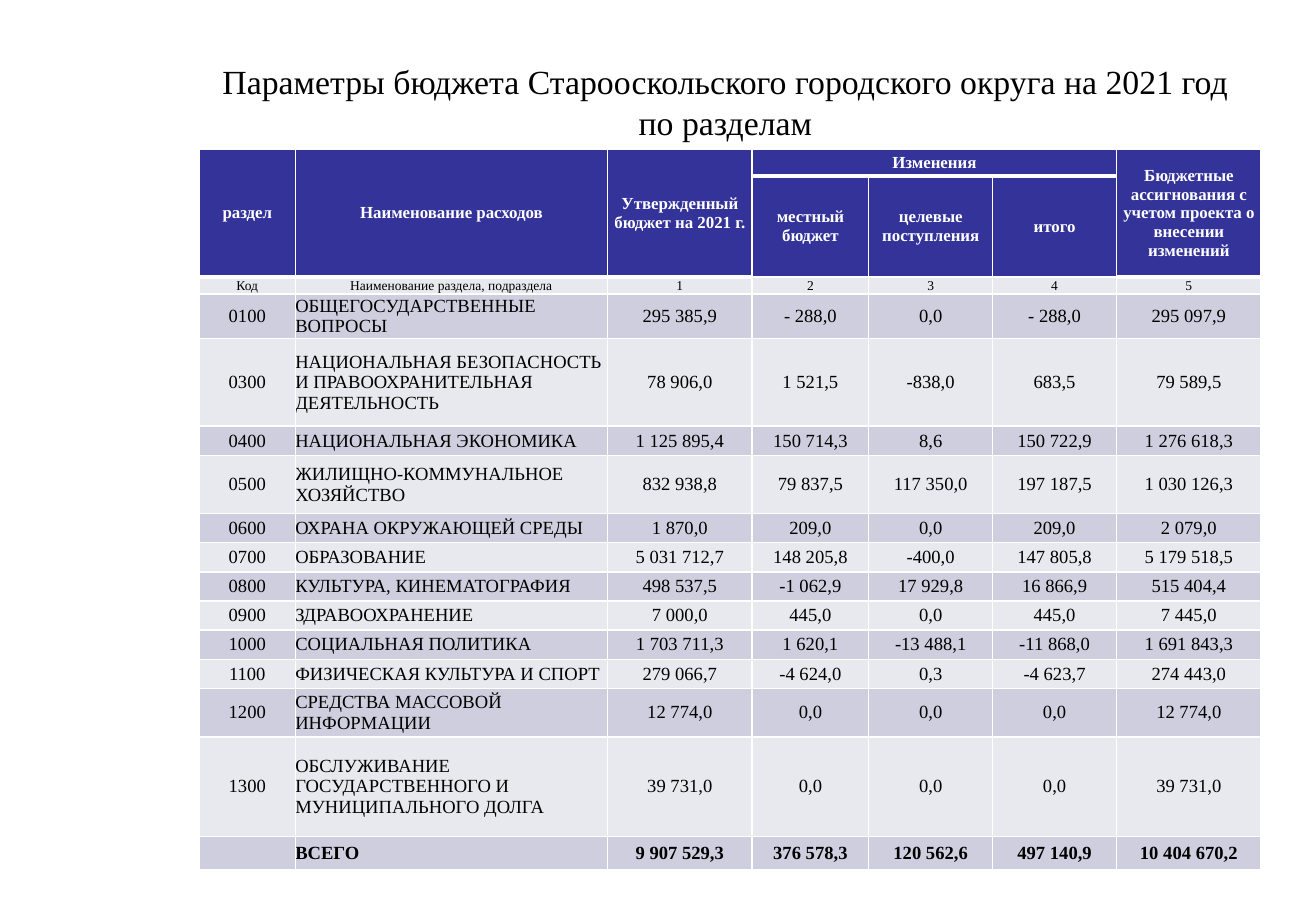
from lxml import etree
from pptx import Presentation
from pptx.dml.color import RGBColor
from pptx.enum.text import MSO_ANCHOR, PP_ALIGN
from pptx.oxml.ns import qn
from pptx.util import Inches, Pt

MIDDLE = MSO_ANCHOR.MIDDLE
LEFT, CENTER = PP_ALIGN.LEFT, PP_ALIGN.CENTER

FONT = "Times New Roman"
BLACK, WHITE = "000000", "FFFFFF"
HEADER_FILL, DARK_BAND, LIGHT_BAND = "333399", "CECEDE", "E8E8EF"
THIN, THICK = 1, 3

TITLE = "Параметры бюджета Старооскольского городского округа на 2021 год по разделам"
COLUMN_WIDTHS = [0.79, 2.57, 1.19, 0.96, 1.02, 1.02, 1.19]
ROW_HEIGHTS = [0.22, 0.83, 0.14, 0.37, 0.72, 0.24, 0.48] + [0.24] * 6 + [0.4, 0.82, 0.27]
NAME_COLUMN = 1
CODE_ROW = 2
HEADER_SPANS = [((0, col), (1, col)) for col in (0, 1, 2, 6)] + [((0, 3), (0, 5))]

BUDGET = [
    ["раздел", "Наименование расходов", "Утвержденный бюджет на 2021 г.", "Изменения", "", "",
     "Бюджетные ассигнования с учетом проекта о внесении изменений"],
    ["", "", "", "местный бюджет", "целевые поступления", "итого", ""],
    ["Код", "Наименование раздела, подраздела", "1", "2", "3", "4", "5"],
    ["0100", "ОБЩЕГОСУДАРСТВЕННЫЕ ВОПРОСЫ",
     "295 385,9", "- 288,0", "0,0", "- 288,0", "295 097,9"],
    ["0300", "НАЦИОНАЛЬНАЯ БЕЗОПАСНОСТЬ И ПРАВООХРАНИТЕЛЬНАЯ ДЕЯТЕЛЬНОСТЬ",
     "78 906,0", "1 521,5", "-838,0", "683,5", "79 589,5"],
    ["0400", "НАЦИОНАЛЬНАЯ ЭКОНОМИКА",
     "1 125 895,4", "150 714,3", "8,6", "150 722,9", "1 276 618,3"],
    ["0500", "ЖИЛИЩНО-КОММУНАЛЬНОЕ ХОЗЯЙСТВО",
     "832 938,8", "79 837,5", "117 350,0", "197 187,5", "1 030 126,3"],
    ["0600", "ОХРАНА ОКРУЖАЮЩЕЙ СРЕДЫ",
     "1 870,0", "209,0", "0,0", "209,0", "2 079,0"],
    ["0700", "ОБРАЗОВАНИЕ",
     "5 031 712,7", "148 205,8", "-400,0", "147 805,8", "5 179 518,5"],
    ["0800", "КУЛЬТУРА, КИНЕМАТОГРАФИЯ",
     "498 537,5", "-1 062,9", "17 929,8", "16 866,9", "515 404,4"],
    ["0900", "ЗДРАВООХРАНЕНИЕ",
     "7 000,0", "445,0", "0,0", "445,0", "7 445,0"],
    ["1000", "СОЦИАЛЬНАЯ ПОЛИТИКА",
     "1 703 711,3", "1 620,1", "-13 488,1", "-11 868,0", "1 691 843,3"],
    ["1100", "ФИЗИЧЕСКАЯ КУЛЬТУРА И СПОРТ",
     "279 066,7", "-4 624,0", "0,3", "-4 623,7", "274 443,0"],
    ["1200", "СРЕДСТВА МАССОВОЙ ИНФОРМАЦИИ",
     "12 774,0", "0,0", "0,0", "0,0", "12 774,0"],
    ["1300", "ОБСЛУЖИВАНИЕ ГОСУДАРСТВЕННОГО И МУНИЦИПАЛЬНОГО ДОЛГА",
     "39 731,0", "0,0", "0,0", "0,0", "39 731,0"],
    ["", "ВСЕГО", "9 907 529,3", "376 578,3", "120 562,6", "497 140,9", "10 404 670,2"],
]
TOTAL_ROW = len(BUDGET) - 1


def rgb(value):
    return RGBColor.from_string(value)


def row_style(row):
    """Return fill, text colour, text size and boldness of a table row."""
    if row < CODE_ROW:
        return HEADER_FILL, WHITE, 10, True
    band = DARK_BAND if row % 2 else LIGHT_BAND
    return band, BLACK, 8 if row == CODE_ROW else 11, row == TOTAL_ROW


class BudgetSlide:
    def __init__(self, presentation, font):
        self.slide = presentation.slides.add_slide(presentation.slide_layouts[6])
        self.font = font

    def style_paragraph(self, paragraph, size, color, bold=False, align=CENTER):
        paragraph.alignment = align
        paragraph.font.name = self.font
        paragraph.font.size = Pt(size)
        paragraph.font.bold = bold
        paragraph.font.color.rgb = rgb(color)

    def add_title(self, text, left, top, width, height):
        frame = self.slide.shapes.add_textbox(
            Inches(left), Inches(top), Inches(width), Inches(height)).text_frame
        frame.word_wrap = True
        frame.vertical_anchor = MIDDLE
        frame.text = text
        self.style_paragraph(frame.paragraphs[0], 20, BLACK)

    def add_budget_table(self, left, top):
        table = self.slide.shapes.add_table(
            len(ROW_HEIGHTS), len(COLUMN_WIDTHS), Inches(left), Inches(top),
            Inches(sum(COLUMN_WIDTHS)), Inches(sum(ROW_HEIGHTS))).table
        table.first_row = table.horz_banding = False
        for column, width in zip(table.columns, COLUMN_WIDTHS):
            column.width = Inches(width)
        for row, height in zip(table.rows, ROW_HEIGHTS):
            row.height = Inches(height)
        for first, last in HEADER_SPANS:
            table.cell(*first).merge(table.cell(*last))
        for row, texts in enumerate(BUDGET):
            for col, text in enumerate(texts):
                self.fill_cell(table.cell(row, col), row, col, text)

    def fill_cell(self, cell, row, col, text):
        fill, color, size, bold = row_style(row)
        cell.margin_left = cell.margin_right = cell.margin_top = cell.margin_bottom = 0
        cell.vertical_anchor = MIDDLE
        cell.text = text
        is_name = col == NAME_COLUMN and row > CODE_ROW
        self.style_paragraph(cell.text_frame.paragraphs[0], size, color, bold,
                             LEFT if is_name else CENTER)
        under_changes = row == 1 and not cell.is_spanned
        ends_header = row == 0 or (row == 1 and cell.is_spanned)
        self.add_borders(cell, THICK if under_changes else THIN,
                         THICK if ends_header else THIN)
        cell.fill.solid()
        cell.fill.fore_color.rgb = rgb(fill)

    def add_borders(self, cell, top, bottom):
        properties = cell._tc.get_or_add_tcPr()
        for side, width in (("L", THIN), ("R", THIN), ("T", top), ("B", bottom)):
            line = etree.SubElement(properties, qn(f"a:ln{side}"), w=str(Pt(width)))
            solid = etree.SubElement(line, qn("a:solidFill"))
            etree.SubElement(solid, qn("a:srgbClr"), val=WHITE)


def main():
    presentation = Presentation()
    presentation.slide_width = Inches(10.83)
    presentation.slide_height = Inches(7.5)
    budget_slide = BudgetSlide(presentation, FONT)
    budget_slide.add_budget_table(1.64, 1.23)
    budget_slide.add_title(TITLE, 1.56, 0.21, 8.82, 1.25)
    presentation.save("out.pptx")


if __name__ == "__main__":
    main()
